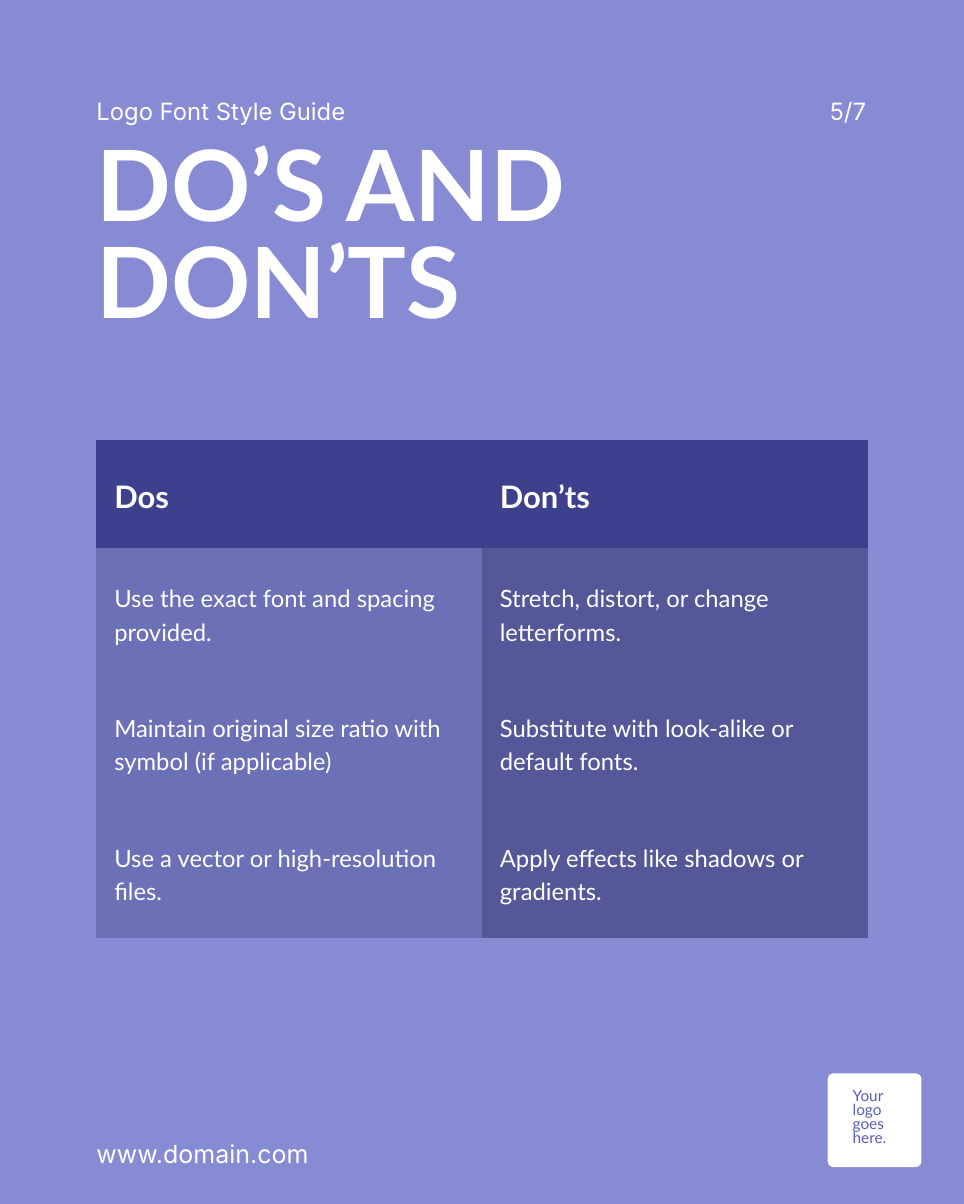
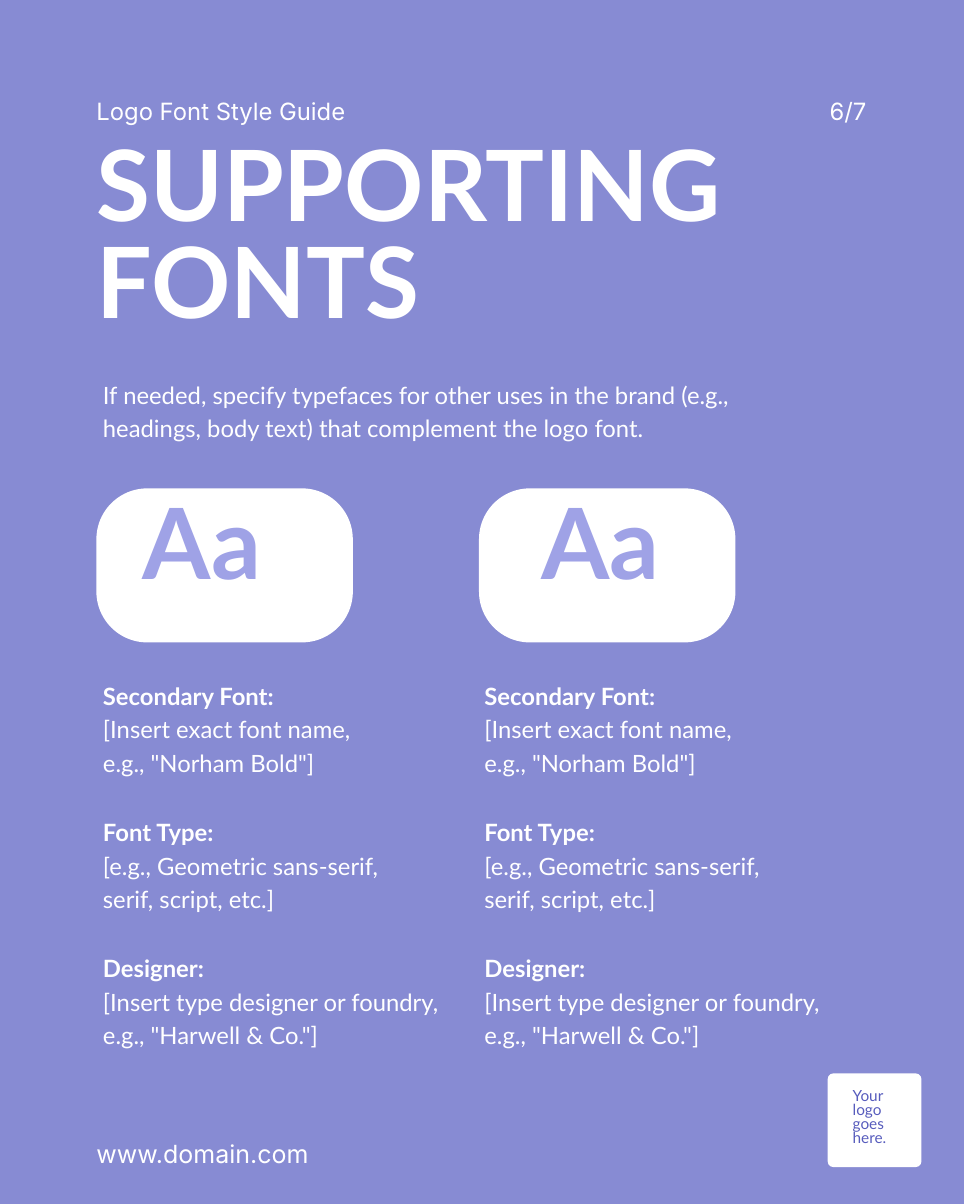
from collections import namedtuple

from pptx import Presentation
from pptx import util as u
from pptx.dml import color
from pptx.enum import shapes, text

Box = namedtuple("Box", "left top width height")

WIDTH, HEIGHT, MARGIN = 810, 1012, 81
CONTENT = WIDTH - 2 * MARGIN
BODY, LABEL = "Lato", "Inter"
WHITE, OFF_WHITE, BACKGROUND = "FFFFFF", "FEFEFE", "878BD3"
LOGO_TEXT, SAMPLE = "575CBD", "9FA2E6"
HEADER_FILL, DO_FILL, DONT_FILL = "3D418D", "6C70B6", "545898"
NO_GRID_STYLE = "{2D5ABB26-0587-4C30-8999-92F81FD0307C}"

RULES = [
    ("Dos", "Don’ts"),
    ("Use the exact font and spacing provided.",
     "Stretch, distort, or change letterforms."),
    ("Maintain original size ratio with symbol (if applicable)",
     "Substitute with look-alike or default fonts."),
    ("Use a vector or high-resolution files.",
     "Apply effects like shadows or gradients."),
]
DETAILS = [
    ("Secondary Font:", '[Insert exact font name, e.g., "Norham Bold"]', 235.5),
    ("Font Type:", "[e.g., Geometric sans-serif, serif, script, etc.]", 235.5),
    ("Designer:", '[Insert type designer or foundry, e.g., "Harwell & Co."]', 288),
]


def paint(target, hex_color):
    if hasattr(target, "solid"):
        target.solid()
        target = target.fore_color
    else:
        target = target.color
    target.rgb = color.RGBColor.from_string(hex_color)


def style(para, size, leading, font=BODY, hex_color=WHITE, bold=False):
    para.line_spacing = u.Pt(leading)
    for span in para.runs:
        span.font.size = u.Pt(size)
        span.font.name = font
        span.font.bold = bold
        paint(span.font, hex_color)


def set_margins(target, margin):
    target.margin_left = target.margin_right = u.Pt(margin)
    target.margin_top = target.margin_bottom = u.Pt(margin)


def add_text(page, box, lines, size, leading, align=None, bold_first=False, **look):
    frame = page.shapes.add_textbox(*map(u.Pt, box)).text_frame
    frame.word_wrap = True
    set_margins(frame, 0)
    frame.text = lines
    for index, para in enumerate(frame.paragraphs):
        if align is not None:
            para.alignment = align
        if bold_first:
            look["bold"] = index == 0
        style(para, size, leading, **look)


def add_card(page, box, rounding):
    card = page.shapes.add_shape(
        shapes.MSO_SHAPE.ROUNDED_RECTANGLE, *map(u.Pt, box))
    card.adjustments[0] = rounding
    card.shadow.inherit = False
    paint(card.fill, WHITE)
    card.line.fill.background()


def add_logo_spot(page, box):
    add_card(page, box, 0.06)
    add_text(page, Box(box.left + 21, box.top + 15, 37.5, 50),
             "Your logo goes here.", 12.9, 11.6, hex_color=LOGO_TEXT)


def add_header(page, box, title, number):
    add_text(page, Box(box.left, box.top, 297, 27.5),
             "Logo Font Style Guide", 20, 28, font=LABEL)
    add_text(page, Box(box.left + box.width - 33.5, box.top, 34, 27.5),
             f"{number}/7", 20, 28, font=LABEL, align=text.PP_ALIGN.CENTER)
    add_text(page, Box(box.left, box.top + 44, 537, box.height - 44),
             title, 82.6, 81.8, bold=True)


def add_page(deck, title, number):
    page = deck.slides.add_slide(deck.slide_layouts[6])
    paint(page.background.fill, BACKGROUND)
    add_logo_spot(page, Box(695.5, 902.25, 78.75, 78.75))
    add_header(page, Box(MARGIN, 77, CONTENT, 227.5), title, number)
    add_text(page, Box(MARGIN, 952.5, 194, 29), "www.domain.com", 21, 29.4, font=LABEL)
    return page


def add_rules_table(page, box):
    table = page.shapes.add_table(len(RULES), 2, *map(u.Pt, box)).table
    table.first_row = table.horz_banding = False
    table._tbl.tblPr[0].text = NO_GRID_STYLE
    header_height = 91
    row_height = (box.height - header_height) / (len(RULES) - 1)
    for column in table.columns:
        column.width = u.Pt(box.width / 2)
    for row_index, rule in enumerate(RULES):
        is_header = row_index == 0
        table.rows[row_index].height = u.Pt(header_height if is_header else row_height)
        for column_index, wording in enumerate(rule):
            cell = table.cell(row_index, column_index)
            set_margins(cell, 15)
            cell.vertical_anchor = text.MSO_ANCHOR.MIDDLE
            cell.text = wording
            para = cell.text_frame.paragraphs[0]
            if is_header:
                paint(cell.fill, HEADER_FILL)
                style(para, 26, 36.4, hex_color=OFF_WHITE, bold=True)
            else:
                paint(cell.fill, (DO_FILL, DONT_FILL)[column_index])
                style(para, 20, 28, hex_color=(OFF_WHITE, WHITE)[column_index])


def add_font_column(page, box, sample_indent, text_indent):
    add_card(page, Box(box.left, box.top, box.width, 129.5), 0.33)
    add_text(page, Box(box.left + sample_indent, box.top + 11.5, 110, 103),
             "Aa", 82.6, 81.8, hex_color=SAMPLE, bold=True)
    for index, (label, wording, width) in enumerate(DETAILS):
        add_text(page,
                 Box(box.left + text_indent, box.top + 158.5 + 114.5 * index, width, 86),
                 f"{label}\n{wording}", 20, 28, bold_first=True)


def build_rules_page(deck):
    page = add_page(deck, "DO’S AND DON’TS", 5)
    add_rules_table(page, Box(MARGIN, 369.5, CONTENT, 418.6))


def build_fonts_page(deck):
    page = add_page(deck, "SUPPORTING FONTS", 6)
    add_text(page, Box(MARGIN + 5.5, 316, 584, 60),
             "If needed, specify typefaces for other uses in the brand (e.g., "
             "headings, body text) that complement the logo font.", 20, 28)
    add_font_column(page, Box(MARGIN, 410.5, 215.5, 492), 39, 5.5)
    add_font_column(page, Box(402.5, 410.5, 215.5, 492), 52.5, 4.5)


def main():
    deck = Presentation()
    deck.slide_width, deck.slide_height = u.Pt(WIDTH), u.Pt(HEIGHT)
    build_rules_page(deck)
    build_fonts_page(deck)
    deck.save("out.pptx")


if __name__ == "__main__":
    main()
